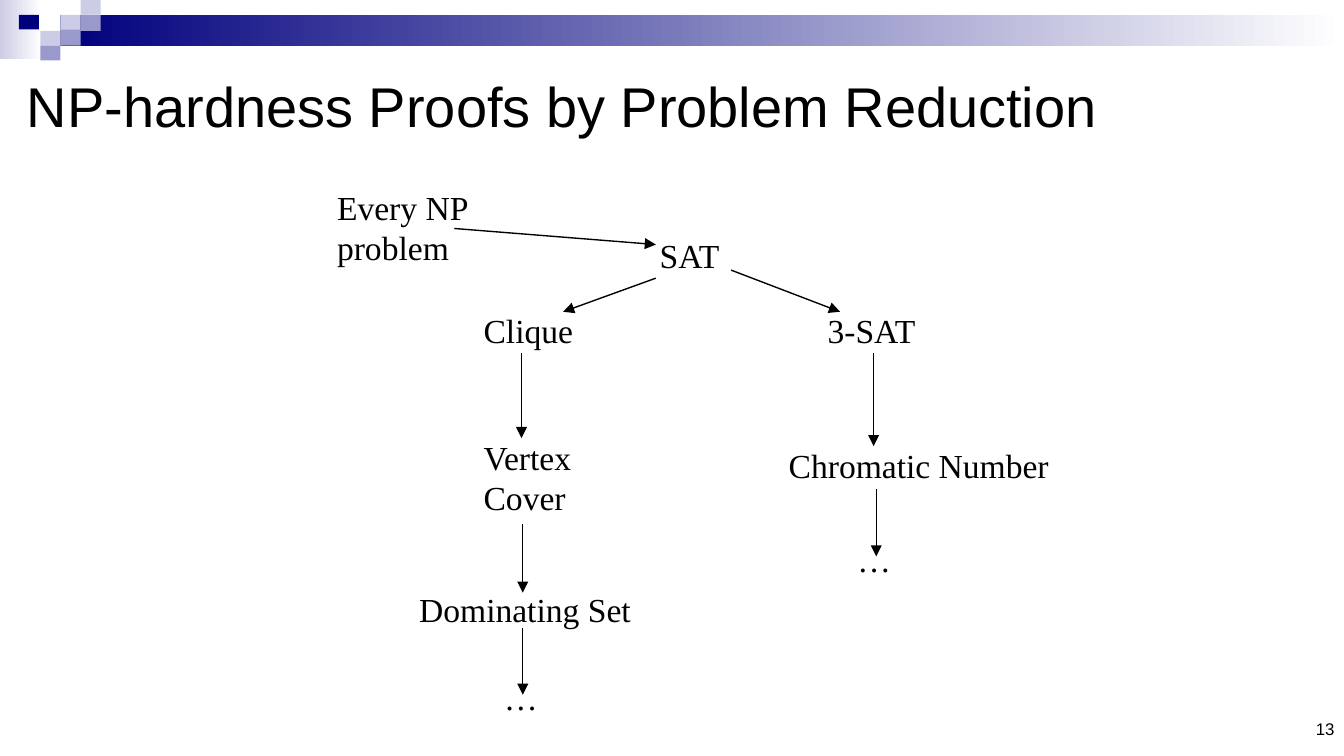
from dataclasses import dataclass

from lxml import etree
from pptx import Presentation
from pptx import util as u
from pptx.dml.color import RGBColor
from pptx.enum import shapes, text
from pptx.oxml import ns


@dataclass(frozen=True)
class Theme:
    ink: str = "000000"
    paper: str = "FFFFFF"
    navy: str = "00007D"
    mid: str = "9999CC"
    pale: str = "CCCCE6"
    sans: str = "Arial"
    serif: str = "Times New Roman"
    title_size: int = 30
    label_size: int = 18
    number_size: int = 9
    line_width: float = 0.75


THEME = Theme()
LEFT, CENTER, RIGHT = text.PP_ALIGN.LEFT, text.PP_ALIGN.CENTER, text.PP_ALIGN.RIGHT

TILES = [
    (0.45, 0.11, 0.12, THEME.pale),
    (0.6, 0, 0.11, THEME.pale),
    (0.6, 0.11, 0.12, THEME.mid),
    (0.3, 0.23, 0.11, THEME.pale),
    (0.14, 0.11, 0.11, THEME.navy),
    (0.45, 0.22, 0.12, THEME.mid),
    (0.3, 0.34, 0.11, THEME.mid),
]

LABELS = [
    ("Vertex Cover", 3.5, 3.2, 1.23, 0.71, LEFT),
    ("Clique", 3.5, 2.26, 0.94, 0.4, LEFT),
    ("3-SAT", 6.06, 2.26, 1.06, 0.4, LEFT),
    ("SAT", 4.81, 1.7, 0.69, 0.4, LEFT),
    ("Chromatic Number", 5.77, 3.26, 2.17, 0.4, LEFT),
    ("Dominating Set", 3.02, 4.33, 1.79, 0.4, LEFT),
    ("Every NP problem", 2.41, 1.34, 1.56, 0.71, LEFT),
    ("…", 5.42, 3.96, 2.17, 0.4, CENTER),
    ("…", 2.79, 4.99, 2.17, 0.4, CENTER),
]

REDUCTIONS = [
    (3.38, 1.7, 4.88, 1.82),
    (4.88, 2.07, 4.19, 2.32),
    (3.88, 2.63, 3.88, 3.26),
    (3.89, 3.9, 3.89, 4.41),
    (6.5, 2.63, 6.5, 3.32),
    (5.44, 2.01, 6.25, 2.32),
    (6.52, 3.64, 6.52, 4.14),
    (3.89, 4.67, 3.89, 5.17),
]


def inches(*values):
    return [u.Inches(value) for value in values]


def color(code):
    return RGBColor.from_string(code)


def add_block(page, left, top, width, height, start, end=None):
    block = page.shapes.add_shape(
        shapes.MSO_SHAPE.RECTANGLE, *inches(left, top, width, height))
    block.shadow.inherit = False
    block.line.fill.background()
    if end is None:
        block.fill.solid()
        block.fill.fore_color.rgb = color(start)
        return
    block.fill.gradient()
    block.fill.gradient_angle = 0
    for stop, position, code in zip(block.fill.gradient_stops, (0, 1), (start, end)):
        stop.position = position
        stop.color.rgb = color(code)


def write(box, words, font, size, align=LEFT, anchor=text.MSO_ANCHOR.TOP,
          margins=(0.1, 0.05)):
    frame = box.text_frame
    frame.word_wrap = True
    frame.auto_size = text.MSO_AUTO_SIZE.NONE
    frame.vertical_anchor = anchor
    frame.margin_left = frame.margin_right = u.Inches(margins[0])
    frame.margin_top = frame.margin_bottom = u.Inches(margins[1])
    para = frame.paragraphs[0]
    para.alignment = align
    span = para.add_run()
    span.text = words
    span.font.name = font
    span.font.size = u.Pt(size)
    span.font.color.rgb = color(THEME.ink)


def add_title(page, words):
    title = page.shapes.title
    title.left, title.top, title.width, title.height = inches(0.13, 0.43, 9.49, 0.71)
    write(title, words, THEME.sans, THEME.title_size,
          anchor=text.MSO_ANCHOR.MIDDLE, margins=(0.07, 0.04))


def add_label(page, words, left, top, width, height, align):
    box = page.shapes.add_textbox(*inches(left, top, width, height))
    write(box, words, THEME.serif, THEME.label_size, align)
    box.text_frame.auto_size = text.MSO_AUTO_SIZE.SHAPE_TO_FIT_TEXT


def add_arrow(page, *ends):
    arrow = page.shapes.add_connector(shapes.MSO_CONNECTOR.STRAIGHT, *inches(*ends))
    arrow.line.color.rgb = color(THEME.ink)
    arrow.line.width = u.Pt(THEME.line_width)
    tail = etree.SubElement(arrow.line._get_or_add_ln(), ns.qn("a:tailEnd"))
    tail.set("type", "triangle")
    etree.SubElement(arrow._element.spPr, ns.qn("a:effectLst"))


def add_page_number(page, number):
    box = page.shapes.add_textbox(*inches(8.3, 5.3, 1.7, 0.24))
    write(box, number, THEME.sans, THEME.number_size, RIGHT,
          text.MSO_ANCHOR.BOTTOM, (0.07, 0.04))


def main():
    deck = Presentation()
    deck.slide_width = u.Inches(10)
    deck.slide_height = deck.slide_width * 9 // 16
    page = deck.slides.add_slide(deck.slide_layouts.get_by_name("Title Only"))
    add_block(page, 0, 0, 0.31, 0.44, THEME.pale, THEME.paper)
    add_block(page, 0.45, 0.11, 9.55, 0.23, THEME.navy, THEME.paper)
    for left, top, height, fill in TILES:
        add_block(page, left, top, 0.15, height, fill)
    add_title(page, "NP-hardness Proofs by Problem Reduction")
    for label in LABELS:
        add_label(page, *label)
    for ends in REDUCTIONS:
        add_arrow(page, *ends)
    add_page_number(page, "13")
    deck.save("out.pptx")


if __name__ == "__main__":
    main()
